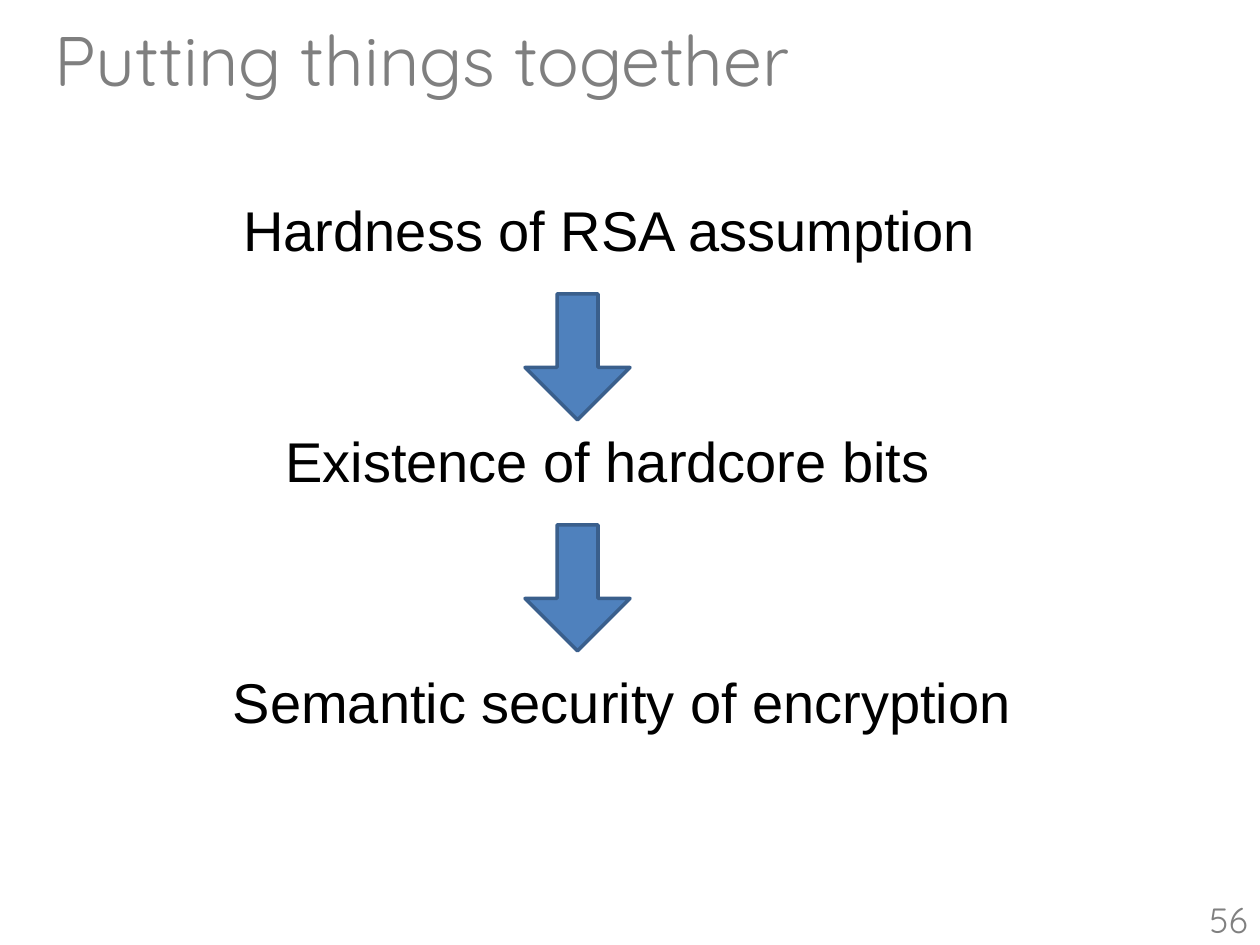
from dataclasses import dataclass

from pptx import Presentation
from pptx.dml.color import RGBColor
from pptx.enum.shapes import MSO_SHAPE
from pptx.enum.text import MSO_ANCHOR, PP_ALIGN
from pptx.util import Pt


@dataclass(frozen=True)
class Theme:
    heading_font: str = "Quicksand"
    body_font: str = "Arial"
    title_color: str = "7F7F7F"
    number_color: str = "808080"
    body_color: str = "000000"
    arrow_fill: str = "4F81BD"
    arrow_line: str = "3A5F8C"
    title_size: int = 40
    body_size: int = 32
    number_size: int = 20


theme = Theme()


def write_text(shape, text, *, font, size, color,
               align=PP_ALIGN.LEFT, anchor=MSO_ANCHOR.TOP):
    frame = shape.text_frame
    frame.word_wrap = True
    frame.vertical_anchor = anchor
    paragraph = frame.paragraphs[0]
    paragraph.alignment = align
    run = paragraph.add_run()
    run.text = text
    run.font.name = font
    run.font.size = Pt(size)
    run.font.color.rgb = RGBColor.from_string(color)


presentation = Presentation()
presentation.slide_width, presentation.slide_height = Pt(720), Pt(540)
slide = presentation.slides.add_slide(presentation.slide_layouts[5])

# Title
title = slide.shapes.title
title.left, title.top, title.width, title.height = Pt(24), Pt(6), Pt(672), Pt(55.5)
write_text(title, "Putting things together", font=theme.heading_font,
           size=theme.title_size, color=theme.title_color)

# Chain of implications: text, left, top, width
steps = [
    ("Hardness of RSA assumption", 132, 108, 444),
    ("Existence of hardcore bits", 156, 240, 444),
    ("Semantic security of encryption", 126, 378, 486),
]
for text, left, top, width in steps:
    box = slide.shapes.add_textbox(Pt(left), Pt(top), Pt(width), Pt(46))
    write_text(box, text, font=theme.body_font, size=theme.body_size,
               color=theme.body_color)

# Arrows between the steps, turned to point down
for top in (174, 306):
    arrow = slide.shapes.add_shape(MSO_SHAPE.RIGHT_ARROW,
                                   Pt(294), Pt(top), Pt(72), Pt(60))
    arrow.rotation = 90
    arrow.adjustments[0] = 0.39
    arrow.adjustments[1] = 0.5
    arrow.shadow.inherit = False
    arrow.fill.solid()
    arrow.fill.fore_color.rgb = RGBColor.from_string(theme.arrow_fill)
    arrow.line.color.rgb = RGBColor.from_string(theme.arrow_line)
    arrow.line.width = Pt(2)

# Slide number
number = slide.shapes.add_textbox(Pt(552), Pt(511), Pt(168), Pt(29))
write_text(number, "56", font=theme.heading_font, size=theme.number_size,
           color=theme.number_color, align=PP_ALIGN.RIGHT, anchor=MSO_ANCHOR.MIDDLE)

presentation.save("out.pptx")
